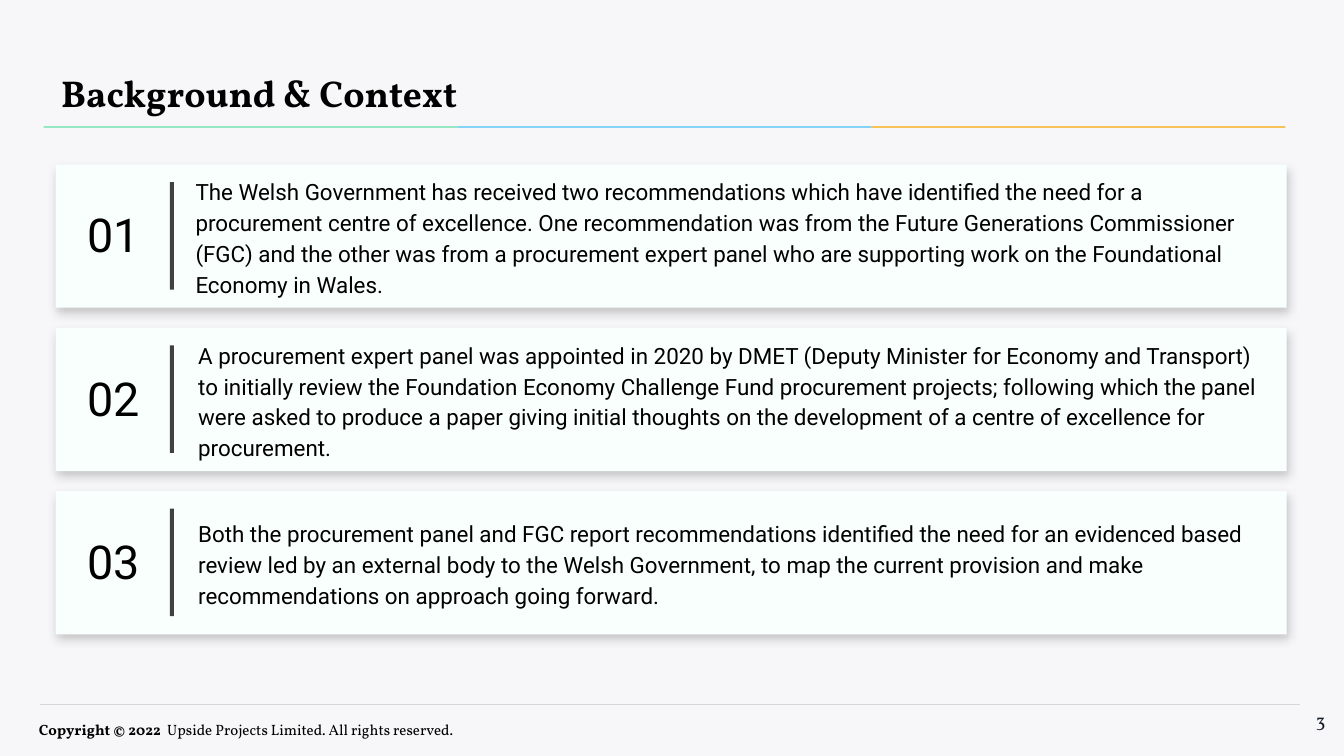
from dataclasses import dataclass

import lxml.etree
import pptx
import pptx.dml.color
import pptx.enum.shapes
import pptx.enum.text
import pptx.oxml
import pptx.oxml.ns
import pptx.util

PX = 4572
ALIGN = pptx.enum.text.PP_ALIGN
RECT = pptx.enum.shapes.MSO_SHAPE.RECTANGLE
SHADOW = (
    '<a:effectLst xmlns:a="http://schemas.openxmlformats.org/drawingml/2006/main">'
    '<a:outerShdw blurRad="71120" dist="27940" dir="5400000" algn="t" rotWithShape="0">'
    '<a:srgbClr val="000000"><a:alpha val="20000"/></a:srgbClr>'
    '</a:outerShdw></a:effectLst>'
)


@dataclass
class Card:
    number: str
    body: str
    inset: int = 212


CARDS = [
    Card("01", "The Welsh Government has received two recommendations which have "
         "identified the need for a procurement centre of excellence. One recommendation "
         "was from the Future Generations Commissioner (FGC) and the other was from a "
         "procurement expert panel who are supporting work on the Foundational Economy "
         "in Wales.", 208),
    Card("02", "A procurement expert panel was appointed in 2020 by DMET (Deputy Minister "
         "for Economy and Transport) to initially review the Foundation Economy Challenge "
         "Fund procurement projects; following which the panel were asked to produce a "
         "paper giving initial thoughts on the development of a centre of excellence for "
         "procurement."),
    Card("03", "Both the procurement panel and FGC report recommendations identified the "
         "need for an evidenced based review led by an external body to the Welsh "
         "Government, to map the current provision and make recommendations on approach "
         "going forward."),
]
CARD_TOP, CARD_PITCH = 245, 243
STRIPES = ["66DFA9", "49C0F9", "F8A700"]
STRIPE_WIDTH = 616


def rgb(color: str) -> pptx.dml.color.RGBColor:
    return pptx.dml.color.RGBColor.from_string(color)


def set_insets(tf, left: int, top: int, right: int, bottom: int) -> None:
    tf.margin_left, tf.margin_top = left * PX, top * PX
    tf.margin_right, tf.margin_bottom = right * PX, bottom * PX


def set_font(p, size: int, name: str, color: str = "000000") -> None:
    p.font.size = pptx.util.Pt(size)
    p.font.name = name
    p.font.color.rgb = rgb(color)


def add_rect(shapes, x: int, y: int, w: int, h: int, fill: str):
    sp = shapes.add_shape(RECT, x * PX, y * PX, w * PX, h * PX)
    sp.shadow.inherit = False
    sp.fill.solid()
    sp.fill.fore_color.rgb = rgb(fill)
    sp.line.fill.background()
    return sp


def add_text(shapes, x: int, y: int, w: int, h: int, text: str, size: int,
             font: str, inset: tuple[int, int] = (20, 20), color: str = "000000"):
    tf = shapes.add_textbox(x * PX, y * PX, w * PX, h * PX).text_frame
    tf.word_wrap = True
    set_insets(tf, *inset, *inset)
    p = tf.paragraphs[0]
    p.text = text
    set_font(p, size, font, color)
    return p


def add_card(shapes, card: Card, y: int) -> None:
    sp = add_rect(shapes, 83, y, 1832, 213, "F9FFFC")
    spPr = sp._element.spPr
    spPr.remove(spPr.find(pptx.oxml.ns.qn("a:effectLst")))
    spPr.append(pptx.oxml.parse_xml(SHADOW))
    tf = sp.text_frame
    tf.word_wrap = True
    tf.vertical_anchor = pptx.enum.text.MSO_ANCHOR.MIDDLE
    set_insets(tf, card.inset, 20, 20, 20)
    p = tf.paragraphs[0]
    p.text = card.body
    p.alignment = ALIGN.LEFT
    p.line_spacing = 1.15
    set_font(p, 12, "Roboto")
    add_text(shapes, 110, y + 42, 120, 162, card.number, 25, "Roboto")
    add_rect(shapes, 253, y + 26, 6, 160, "414141")


def add_footer(shapes) -> None:
    line = shapes.add_connector(pptx.enum.shapes.MSO_CONNECTOR.STRAIGHT,
                                60 * PX, 1048 * PX, 1934 * PX, 1048 * PX)
    line.line.color.rgb = rgb("D4D8D8")
    line.line.width = pptx.util.Pt(0.75)
    lxml.etree.SubElement(line._element.spPr, pptx.oxml.ns.qn("a:effectLst"))
    p = add_text(shapes, 38, 1058, 1204, 48, "Copyright © 2022  ", 8, "Vollkorn", (20, 10))
    p.line_spacing = 1.2
    p.runs[0].font.bold = True
    r = p.add_run()
    r.text = "Upside Projects Limited. All rights reserved."
    p = add_text(shapes, 1872, 1038, 120, 86, "3", 10, "Vollkorn", color="151E28")
    p.alignment = ALIGN.RIGHT


def main() -> None:
    prs = pptx.Presentation()
    prs.slide_width, prs.slide_height = 2000 * PX, 1125 * PX
    s = prs.slides.add_slide(prs.slide_layouts[6])
    s.background.fill.solid()
    s.background.fill.fore_color.rgb = rgb("F7F7F9")
    add_footer(s.shapes)
    title = add_text(s.shapes, 83, 97, 660, 76, "Background & Context", 20,
                     "Vollkorn", (8, 8))
    title.font.bold = True
    stripes = s.shapes.add_group_shape().shapes
    for i, color in enumerate(STRIPES):
        add_rect(stripes, 65 + i * STRIPE_WIDTH, 188, STRIPE_WIDTH, 2, color)
    for i, card in enumerate(CARDS):
        add_card(s.shapes, card, CARD_TOP + i * CARD_PITCH)
    prs.save("out.pptx")


if __name__ == "__main__":
    main()
